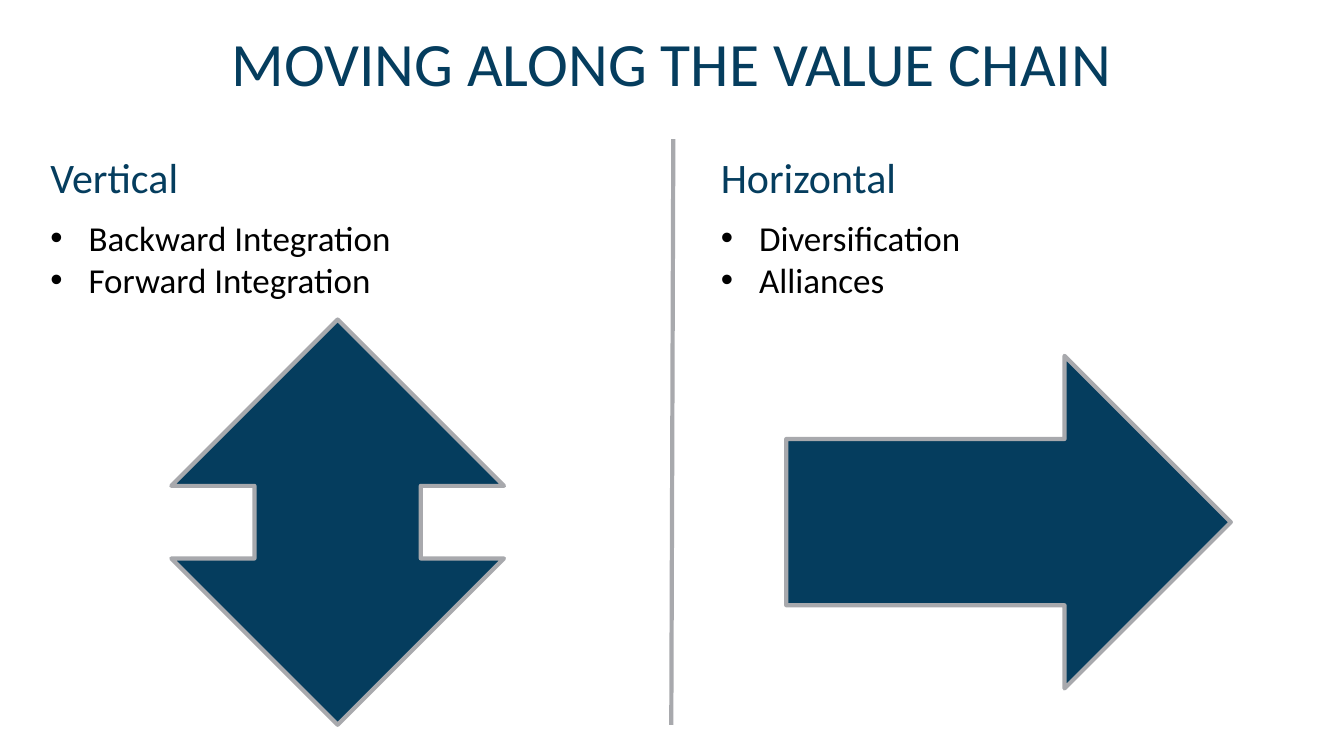
from dataclasses import dataclass

from lxml.etree import SubElement
from pptx import Presentation
from pptx.dml.color import RGBColor
from pptx.enum.shapes import MSO_CONNECTOR, MSO_SHAPE
from pptx.enum.text import MSO_ANCHOR, MSO_AUTO_SIZE, PP_ALIGN
from pptx.oxml.ns import qn
from pptx.shapes.base import BaseShape
from pptx.slide import Slide
from pptx.util import Inches, Length, Pt

SLIDE_WIDTH, SLIDE_HEIGHT = Inches(13.333), Inches(7.5)
COMPARISON_LAYOUT = 4
FONT = "Calibri"
NAVY, GRAY, BLACK = "053D5E", "A8A9AD", "000000"
LINE_WIDTH = Pt(3)
BULLET_INDENT = Inches(0.38)


@dataclass(frozen=True)
class Box:
    """A rectangle in percent of the slide's width and height."""
    left: float
    top: float
    width: float
    height: float


@dataclass(frozen=True)
class Direction:
    heading: str
    items: tuple[str, ...]
    left: float
    heading_index: int
    list_index: int
    arrow: MSO_SHAPE
    arrow_box: Box
    adjustments: tuple[float, ...]


DIRECTIONS = (
    Direction("Vertical", ("Backward Integration", "Forward Integration"), 3, 1, 2,
              MSO_SHAPE.UP_DOWN_ARROW, Box(12.75, 42.27, 24.75, 53.6), (0.5, 0.5)),
    Direction("Horizontal", ("Diversification", "Alliances"), 52.88, 3, 4,
              MSO_SHAPE.RIGHT_ARROW, Box(58.5, 47.07, 33.08, 44), (0.5, 0.5)),
)


def across(percent: float) -> Length:
    return Length(round(SLIDE_WIDTH * percent / 100))


def down(percent: float) -> Length:
    return Length(round(SLIDE_HEIGHT * percent / 100))


def color(value: str) -> RGBColor:
    return RGBColor.from_string(value)


def fill_placeholder(shape: BaseShape, box: Box, text: str, size: float, text_color: str,
                     alignment: PP_ALIGN = PP_ALIGN.LEFT) -> None:
    shape.left, shape.top = across(box.left), down(box.top)
    shape.width, shape.height = across(box.width), down(box.height)
    frame = shape.text_frame
    frame.text = text
    frame.word_wrap = True
    frame.auto_size = MSO_AUTO_SIZE.NONE
    frame.vertical_anchor = MSO_ANCHOR.TOP
    for paragraph in frame.paragraphs:
        paragraph.alignment = alignment
        paragraph.space_before = Pt(0)
        for run in paragraph.runs:
            run.font.name = FONT
            run.font.size = Pt(size)
            run.font.bold = False
            run.font.color.rgb = color(text_color)


def add_bullets(shape: BaseShape) -> None:
    for paragraph in shape.text_frame.paragraphs:
        properties = paragraph._p.get_or_add_pPr()
        properties.set("marL", str(BULLET_INDENT))
        properties.set("indent", str(-BULLET_INDENT))
        SubElement(properties, qn("a:buFont")).set("typeface", "Arial")
        SubElement(properties, qn("a:buChar")).set("char", "•")


def add_arrow(slide: Slide, direction: Direction) -> None:
    box = direction.arrow_box
    arrow = slide.shapes.add_shape(direction.arrow, across(box.left), down(box.top),
                                   across(box.width), down(box.height))
    for index, adjustment in enumerate(direction.adjustments):
        arrow.adjustments[index] = adjustment
    arrow.shadow.inherit = False
    arrow.fill.solid()
    arrow.fill.fore_color.rgb = color(NAVY)
    arrow.line.color.rgb = color(GRAY)
    arrow.line.width = LINE_WIDTH


def add_divider(slide: Slide) -> None:
    divider = slide.shapes.add_connector(MSO_CONNECTOR.STRAIGHT, across(50.1), down(18.4),
                                         across(49.95), down(95.87))
    divider.line.color.rgb = color(GRAY)
    divider.line.width = LINE_WIDTH
    SubElement(divider._element.spPr, qn("a:effectLst"))


def add_direction(slide: Slide, direction: Direction) -> None:
    placeholders = {shape.placeholder_format.idx: shape for shape in slide.placeholders}
    fill_placeholder(placeholders[direction.heading_index],
                     Box(direction.left, 19.33, 47.1, 8.13), direction.heading, 30, NAVY)
    bullet_list = placeholders[direction.list_index]
    fill_placeholder(bullet_list, Box(direction.left, 28, 44.25, 12.53),
                     "\n".join(direction.items), 25, BLACK)
    add_bullets(bullet_list)
    add_arrow(slide, direction)


def main() -> None:
    presentation = Presentation()
    presentation.slide_width, presentation.slide_height = SLIDE_WIDTH, SLIDE_HEIGHT
    slide = presentation.slides.add_slide(presentation.slide_layouts[COMPARISON_LAYOUT])
    fill_placeholder(slide.shapes.title, Box(0, 2.67, 100, 11.2),
                     "MOVING ALONG THE VALUE CHAIN", 44, NAVY, PP_ALIGN.CENTER)
    add_divider(slide)
    for direction in DIRECTIONS:
        add_direction(slide, direction)
    presentation.save("out.pptx")


if __name__ == "__main__":
    main()
